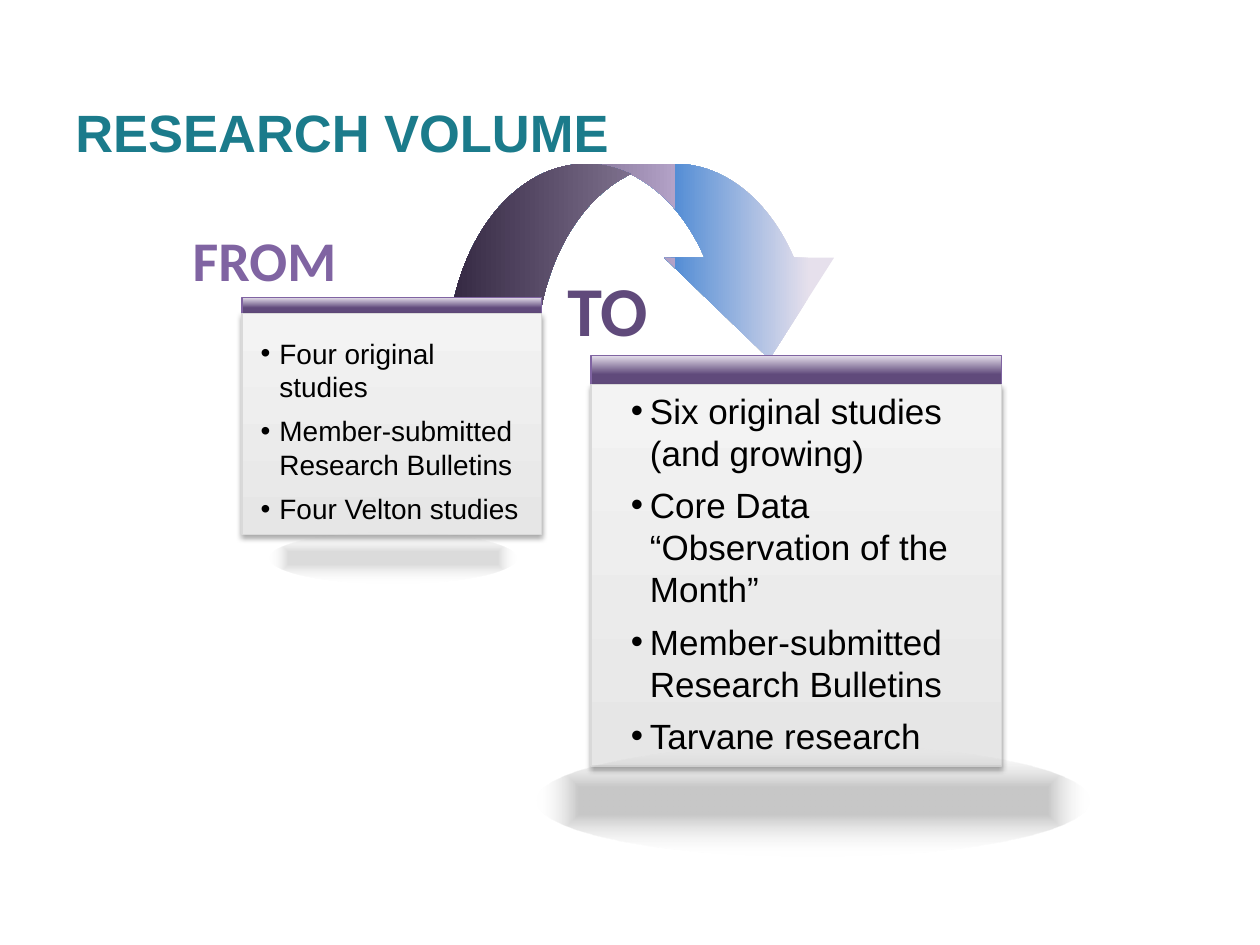
from lxml import etree
from pptx import Presentation
from pptx.dml.color import RGBColor
from pptx.enum.shapes import MSO_SHAPE
from pptx.enum.text import MSO_ANCHOR, MSO_AUTO_SIZE, PP_ALIGN
from pptx.oxml import parse_xml
from pptx.oxml.ns import qn
from pptx.util import Inches, Pt

RECT, OVAL, ARROW = MSO_SHAPE.RECTANGLE, MSO_SHAPE.OVAL, MSO_SHAPE.CURVED_DOWN_ARROW
MIDDLE, TOP = MSO_ANCHOR.MIDDLE, MSO_ANCHOR.TOP
LEFT, CENTER = PP_ALIGN.LEFT, PP_ALIGN.CENTER
GROW, FIXED = MSO_AUTO_SIZE.SHAPE_TO_FIT_TEXT, MSO_AUTO_SIZE.NONE
NS = "http://schemas.openxmlformats.org/drawingml/2006/main"

THEME = {
    "body": "Arial", "label": "Calibri",
    "title": "1B7B8B", "from": "8064A2", "to": "604A7B", "text": "000000",
    "edge": "8064A2", "rim": "D9D9D9",
    "title_pt": 30, "from_pt": 32, "to_pt": 40, "small_pt": 16, "large_pt": 20,
    "arrow": [(11, "E6E0EC"), (44, "558ED5"), (44, "B3A2C7"), (100, "403152")],
    "cap": [(44, "604A7B"), (100, "E6E0EC")],
    "panel": [(0, "E6E6E6"), (100, "F3F3F3")],
}

TITLE = ("RESEARCH VOLUME", (0.5, 0.42, 9.17, 1.25))
LABELS = [
    ("TO", "to", (4.39, 2.07, 0.86, 0.77)),
    ("FROM", "from", (1.42, 1.74, 1.36, 0.64)),
]
BEND = ((3.55, 1.3, 3.23, 1.55), (0.457, 0.869, 0.519))
CARDS = [
    {"cap": (1.92, 2.36, 2.38, 0.15), "panel": (1.92, 2.49, 2.38, 1.75),
     "list": (1.97, 2.62, 2.33, 1.62), "size": "small_pt",
     "base": (2.14, 4.23, 1.96, 0.4), "shade": 14,
     "items": ["Four original studies", "Member-submitted Research Bulletins",
               "Four Velton studies"]},
    {"cap": (4.69, 2.82, 3.26, 0.27), "panel": (4.69, 3.05, 3.26, 3.03),
     "list": (4.91, 3.04, 2.93, 3.05), "size": "large_pt",
     "base": (4.26, 5.91, 4.39, 0.89), "shade": 22,
     "items": ["Six original studies (and growing)",
               "Core Data “Observation of the Month”",
               "Member-submitted Research Bulletins", "Tarvane research"]},
]


def place(box):
    return [Inches(n) for n in box]


def set_grad(shape, stops, aim):
    marks = ""
    for spot, color, *alpha in stops:
        clear = f'<a:alpha val="{alpha[0] * 1000}"/>' if alpha else ""
        marks += f'<a:gs pos="{spot * 1000}"><a:srgbClr val="{color}">{clear}</a:srgbClr></a:gs>'
    grad = parse_xml(f'<a:gradFill xmlns:a="{NS}" rotWithShape="1">'
                     f'<a:gsLst>{marks}</a:gsLst>{aim}</a:gradFill>')
    shape.fill.background()
    old = shape._element.spPr.find(qn("a:noFill"))
    old.getparent().replace(old, grad)


def add_form(home, kind, box, stops, aim, line=None):
    shape = home.add_shape(kind, *place(box))
    shape.shadow.inherit = False
    set_grad(shape, stops, aim)
    if line:
        shape.line.color.rgb = RGBColor.from_string(line)
        shape.line.width = Pt(0.75)
    else:
        shape.line.fill.background()
    return shape


def slope(angle):
    return f'<a:lin ang="{angle * 60000}" scaled="0"/>'


def add_shadow(shape):
    effects = shape._element.spPr.find(qn("a:effectLst"))
    effects.append(parse_xml(
        f'<a:outerShdw xmlns:a="{NS}" blurRad="{Pt(3.1)}" dist="{Pt(1.8)}" dir="5400000" '
        'algn="t" rotWithShape="0"><a:srgbClr val="000000"><a:alpha val="35000"/>'
        '</a:srgbClr></a:outerShdw>'))


def add_text(slide, lines, box, font, size, color, bold=False, wrap=True,
             align=LEFT, anchor=TOP, fit=GROW, marks=False):
    frame = slide.shapes.add_textbox(*place(box)).text_frame
    frame.word_wrap = wrap
    frame.auto_size = fit
    frame.vertical_anchor = anchor
    frame.text = "\n".join(lines)
    for para in frame.paragraphs:
        para.alignment = align
        if marks:
            props = para._p.get_or_add_pPr()
            props.set("marL", str(Inches(0.15)))
            props.set("indent", str(-Inches(0.15)))
            para.space_after = Pt(6)
            etree.SubElement(props, qn("a:buFont")).set("typeface", "Arial")
            etree.SubElement(props, qn("a:buChar")).set("char", "•")
        for run in para.runs:
            run.font.name = font
            run.font.size = Pt(size)
            run.font.bold = bold
            run.font.color.rgb = RGBColor.from_string(color)


def main():
    deck = Presentation()
    deck.slide_width, deck.slide_height = Inches(10), Inches(7.5)
    slide = deck.slides.add_slide(deck.slide_layouts[6])
    forms = slide.shapes

    text, box = TITLE
    add_text(slide, [text], box, THEME["body"], THEME["title_pt"], THEME["title"],
             bold=True, anchor=MIDDLE, fit=FIXED)
    for text, key, box in LABELS:
        add_text(slide, [text], box, THEME["label"], THEME[key + "_pt"], THEME[key],
                 bold=True, wrap=False, align=CENTER)

    box, bends = BEND
    arrow = add_form(forms, ARROW, box, THEME["arrow"], slope(180))
    for i, bend in enumerate(bends):
        arrow.adjustments[i] = bend

    for card in CARDS:
        group = forms.add_group_shape().shapes
        add_form(group, RECT, card["cap"], THEME["cap"], slope(270), THEME["edge"])
        panel = add_form(group, RECT, card["panel"], THEME["panel"], slope(270), THEME["rim"])
        add_shadow(panel)

    focus = '<a:path path="shape"><a:fillToRect l="50000" t="50000" r="50000" b="50000"/></a:path>'
    for card in reversed(CARDS):
        add_text(slide, card["items"], card["list"], THEME["body"], THEME[card["size"]],
                 THEME["text"], marks=True)
    for card in reversed(CARDS):
        stops = [(24, "000000", card["shade"]), (100, "FFFFFF", 0)]
        add_form(forms, OVAL, card["base"], stops, focus)

    deck.save("out.pptx")


if __name__ == "__main__":
    main()
